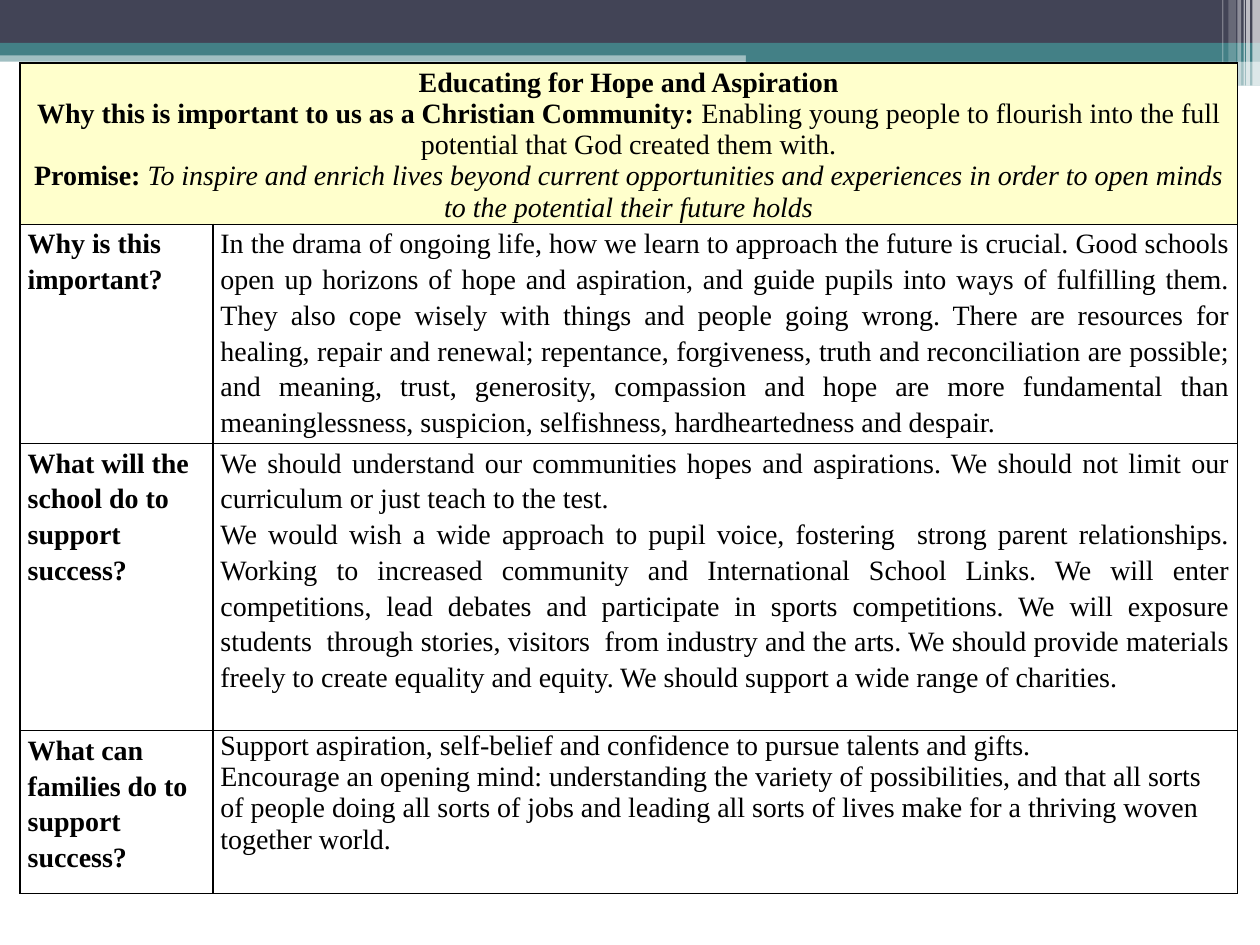
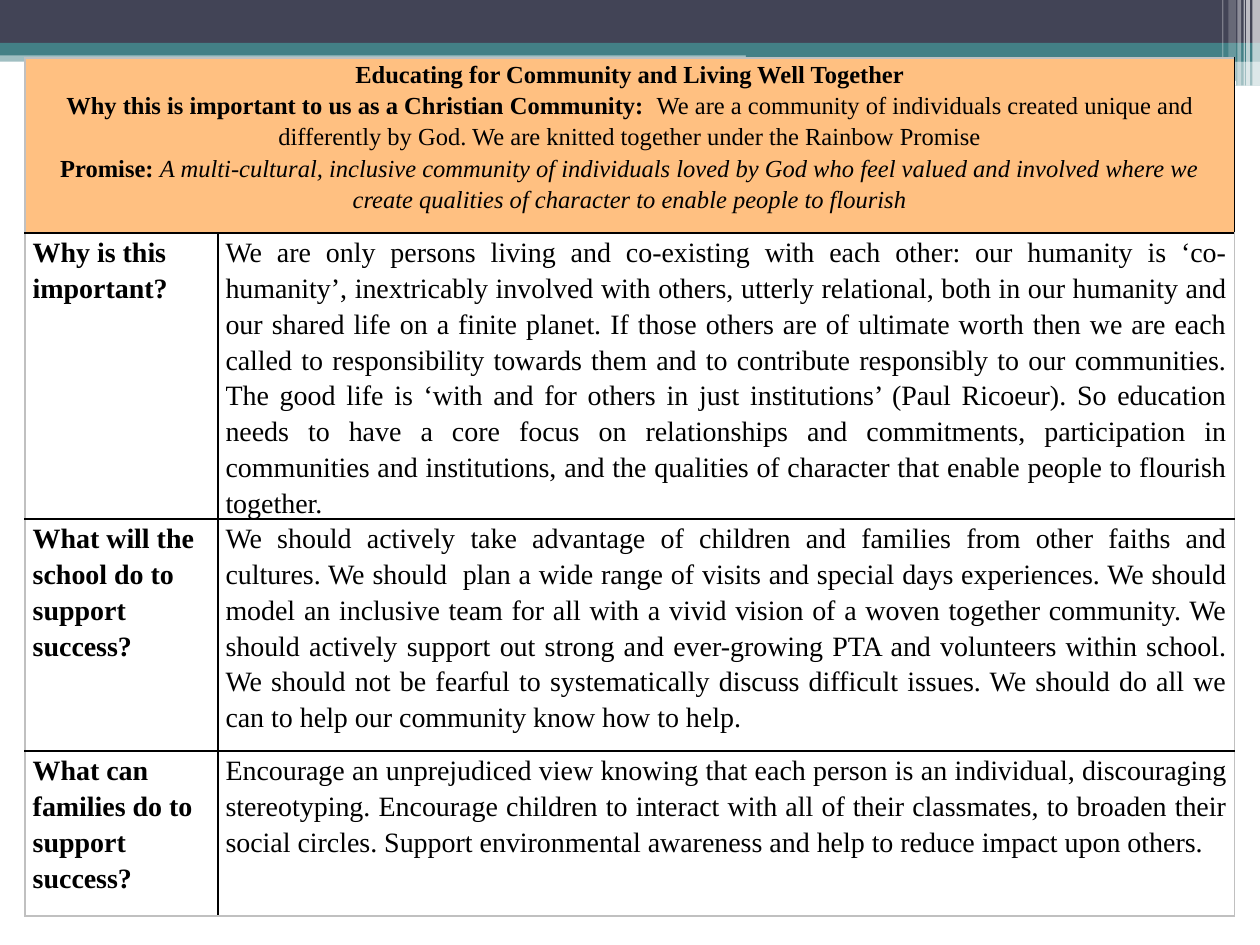
import dataclasses
import typing

import lxml.etree
import pptx
import pptx.dml.color
import pptx.enum.shapes
import pptx.enum.text
import pptx.oxml.ns
import pptx.slide
import pptx.table
import pptx.util

# Grid: 1000 columns by 750 rows of square units over a 10 x 7.5 inch slide
COLUMNS, ROWS = 1000, 750
UNIT = pptx.util.Inches(10) // COLUMNS

ALIGN = pptx.enum.text.PP_ALIGN
RECT = pptx.enum.shapes.MSO_SHAPE.RECTANGLE
ROUNDED = pptx.enum.shapes.MSO_SHAPE.ROUNDED_RECTANGLE


@dataclasses.dataclass(frozen=True)
class Theme:
    font: str = "Times New Roman"
    ink: str = "000000"
    paper: str = "FFFFFF"
    slate: str = "424456"
    teal: str = "438086"
    lemon: str = "FFFFCC"
    apricot: str = "FFC081"
    silver: str = "C0C0C0"
    body_size: float = 16
    small_size: float = 14
    rule_width: float = 1
    loose: float = 1.15
    single: float = 1.0


THEME = Theme()

FORMATS: dict[str, dict[str, bool]] = {
    "plain": {"bold": False, "italic": False},
    "bold": {"bold": True, "italic": False},
    "italic": {"bold": False, "italic": True},
}


class Band(typing.NamedTuple):
    left: int
    top: int
    width: int
    height: int
    color: str
    opacity: int = 100
    outline: pptx.enum.shapes.MSO_SHAPE = RECT


class Words(typing.NamedTuple):
    text: str
    style: str = "plain"


@dataclasses.dataclass(frozen=True)
class Para:
    words: tuple[Words, ...]
    align: ALIGN = ALIGN.JUSTIFY
    spacing: float = THEME.loose
    size: float = THEME.body_size


@dataclasses.dataclass(frozen=True)
class Value:
    """One slide: a heading cell over three question-and-answer rows."""
    left: int
    top: int
    columns: tuple[int, int]
    rows: tuple[int, ...]
    color: str
    edge: str
    heading: tuple[Para, ...]
    answers: tuple[tuple[Para, ...], ...]


# Top bands, then the white stripes in the right corner
BANDS = [
    Band(0, 40, COLUMNS, 9, THEME.teal, 50),
    Band(0, 0, COLUMNS, 34, THEME.slate),
    Band(0, 34, COLUMNS, 10, THEME.teal),
    Band(592, 39, 408, 10, THEME.teal),
    Band(592, 48, 408, 20, THEME.teal, 50),
    Band(591, 54, 335, 3, THEME.paper, outline=ROUNDED),
    Band(806, 64, 175, 4, THEME.paper, outline=ROUNDED),
] + [
    Band(left, 0, width, height, THEME.paper, opacity)
    for left, width, height, opacity in [
        (994, 6, 68, 65), (989, 3, 68, 65), (987, 1, 68, 60),
        (982, 3, 68, 40), (975, 6, 64, 20), (970, 1, 64, 30),
    ]
]

QUESTIONS = (
    "Why is this important?",
    "What will the school do to support success?  ",
    "What can families do to support success?",
)


def heading(title: str, lead: str, reason: str, promise: str,
            size: float, spacing: float) -> tuple[Para, ...]:
    """Title, reason and promise, centred; the title is always loosely spaced."""
    return (
        Para((Words(title, "bold"),), ALIGN.CENTER, THEME.loose, size),
        Para((Words(lead, "bold"), Words(reason)), ALIGN.CENTER, spacing, size),
        Para((Words("Promise: ", "bold"), Words(promise, "italic")),
             ALIGN.CENTER, spacing, size),
    )


def answer(*texts: str, align: ALIGN = ALIGN.JUSTIFY,
           spacing: float = THEME.loose) -> tuple[Para, ...]:
    return tuple(Para((Words(text),), align, spacing) for text in texts)


VALUES = [
    Value(
        16, 50, (153, 813), (128, 174, 228, 129), THEME.lemon, THEME.ink,
        heading(
            "Educating for Hope and Aspiration",
            "Why this is important to us as a Christian Community: ",
            "Enabling young people to flourish into the full potential that God "
            "created them with.",
            "To inspire and enrich lives beyond current opportunities and "
            "experiences in order to open minds to the potential their future holds",
            THEME.body_size, THEME.single,
        ),
        (
            answer(
                "In the drama of ongoing life, how we learn to approach the future is "
                "crucial. Good schools open up horizons of hope and aspiration, and "
                "guide pupils into ways of fulfilling them. They also cope wisely with "
                "things and people going wrong. There are resources for healing, repair "
                "and renewal; repentance, forgiveness, truth and reconciliation are "
                "possible; and meaning, trust, generosity, compassion and hope are more "
                "fundamental than meaninglessness, suspicion, selfishness, "
                "hardheartedness and despair. "
            ),
            answer(
                "We should understand our communities hopes and aspirations. We should "
                "not limit our curriculum or just teach to the test. ",
                "We would wish a wide approach to pupil voice, fostering  strong parent "
                "relationships. Working to increased community and International School "
                "Links. We will enter competitions, lead debates and participate in "
                "sports competitions. We will exposure students  through stories, "
                "visitors  from industry and the arts. We should provide materials "
                "freely to create equality and equity. We should support a wide range "
                "of charities. ",
            ),
            answer(
                "Support aspiration, self-belief and confidence to pursue talents and "
                "gifts.",
                "Encourage an opening mind: understanding the variety of possibilities, "
                "and that all sorts of people doing all sorts of jobs and leading all "
                "sorts of lives make for a thriving woven together world.",
                align=ALIGN.LEFT, spacing=THEME.single,
            ),
        ),
    ),
    Value(
        20, 46, (153, 807), (139, 227, 184, 131), THEME.apricot, THEME.silver,
        heading(
            "Educating for Community and Living Well Together",
            "Why this is important to us as a Christian Community:  ",
            "We are a community of individuals created unique and differently by God. "
            "We are knitted together under the Rainbow Promise",
            "A multi-cultural, inclusive community of individuals loved by God who "
            "feel valued and involved where we create qualities of character to "
            "enable people to flourish",
            THEME.small_size, THEME.loose,
        ),
        (
            answer(
                "We are only persons living and co-existing with each other: our "
                "humanity is ‘co-humanity’, inextricably involved with others, utterly "
                "relational, both in our humanity and our shared life on a finite "
                "planet. If those others are of ultimate worth then we are each called "
                "to responsibility towards them and to contribute responsibly to our "
                "communities. The good life is ‘with and for others in just "
                "institutions’ (Paul Ricoeur). So education needs to have a core focus "
                "on relationships and commitments, participation in communities and "
                "institutions, and the qualities of character that enable people to "
                "flourish together."
            ),
            answer(
                "We should actively take advantage of children and families from other "
                "faiths and cultures. We should  plan a wide range of visits and "
                "special days experiences. We should model an inclusive team for all "
                "with a vivid vision of a woven together community. We should actively "
                "support out strong and ever-growing PTA and volunteers within school. "
                "We should not be fearful to systematically discuss difficult issues. "
                "We should do all we can to help our community know how to help."
            ),
            answer(
                "Encourage an unprejudiced view knowing that each person is an "
                "individual, discouraging stereotyping. Encourage children to interact "
                "with all of their classmates, to broaden their social circles. "
                "Support environmental awareness and help to reduce impact upon others."
            ),
        ),
    ),
]


def apply(target: typing.Any, values: dict[str, typing.Any]) -> None:
    for name, value in values.items():
        setattr(target, name, value)


def rgb(color: str) -> pptx.dml.color.RGBColor:
    return pptx.dml.color.RGBColor.from_string(color)


def draw_band(slide: pptx.slide.Slide, band: Band) -> None:
    strip = slide.shapes.add_shape(
        band.outline, *(UNIT * n for n in (band.left, band.top, band.width, band.height)))
    strip.shadow.inherit = False
    strip.line.fill.background()
    strip.fill.solid()
    strip.fill.fore_color.rgb = rgb(band.color)
    if band.opacity < 100:
        tint = strip._element.spPr.find(".//" + pptx.oxml.ns.qn("a:srgbClr"))
        lxml.etree.SubElement(tint, pptx.oxml.ns.qn("a:alpha"),
                              val=str(band.opacity * 1000))


def rule_cell(cell: pptx.table._Cell, colors: dict[str, str]) -> None:
    """Draw the cell's borders, given a colour for each side."""
    properties = cell._tc.get_or_add_tcPr()
    for place, (side, color) in enumerate(colors.items()):
        rule = lxml.etree.Element(pptx.oxml.ns.qn(f"a:ln{side}"),
                                  w=str(pptx.util.Pt(THEME.rule_width)))
        fill = lxml.etree.SubElement(rule, pptx.oxml.ns.qn("a:solidFill"))
        lxml.etree.SubElement(fill, pptx.oxml.ns.qn("a:srgbClr"), val=color)
        properties.insert(place, rule)


def write_cell(cell: pptx.table._Cell, paras: tuple[Para, ...]) -> None:
    apply(cell, {"margin_left": UNIT * 6, "margin_right": UNIT * 6,
                 "margin_top": 0, "margin_bottom": 0})
    for number, para in enumerate(paras):
        frame = cell.text_frame
        line = frame.paragraphs[0] if number == 0 else frame.add_paragraph()
        apply(line, {"alignment": para.align, "line_spacing": para.spacing})
        for words in para.words:
            run = line.add_run()
            run.text = words.text
            apply(run.font, {"name": THEME.font, "size": pptx.util.Pt(para.size),
                             **FORMATS[words.style]})
            run.font.color.rgb = rgb(THEME.ink)


def draw_value(slide: pptx.slide.Slide, value: Value) -> None:
    last_row, last_column = len(value.rows) - 1, len(value.columns) - 1
    grid = slide.shapes.add_table(
        len(value.rows), len(value.columns), UNIT * value.left, UNIT * value.top,
        UNIT * sum(value.columns), UNIT * sum(value.rows)).table
    apply(grid, {"first_row": False, "horz_banding": False})
    for column, width in zip(grid.columns, value.columns):
        column.width = UNIT * width
    for row, height in zip(grid.rows, value.rows):
        row.height = UNIT * height

    # Fills and borders: the outer edge has its own colour
    for r in range(last_row + 1):
        for c in range(last_column + 1):
            cell = grid.cell(r, c)
            cell.fill.background()
            outer = {"L": c == 0, "R": c == last_column, "T": r == 0, "B": r == last_row}
            rule_cell(cell, {side: value.edge if at_edge else THEME.ink
                             for side, at_edge in outer.items()})

    # Heading across both columns
    top = grid.cell(0, 0)
    top.merge(grid.cell(0, last_column))
    top.fill.solid()
    top.fill.fore_color.rgb = rgb(value.color)
    write_cell(top, value.heading)

    # Questions and answers
    for r, (question, paras) in enumerate(zip(QUESTIONS, value.answers), start=1):
        write_cell(grid.cell(r, 0), (Para((Words(question, "bold"),), ALIGN.LEFT),))
        write_cell(grid.cell(r, 1), paras)


def main() -> None:
    deck = pptx.Presentation()
    apply(deck, {"slide_width": UNIT * COLUMNS, "slide_height": UNIT * ROWS})
    for value in VALUES:
        slide = deck.slides.add_slide(deck.slide_layouts[6])
        for band in BANDS:
            draw_band(slide, band)
        draw_value(slide, value)
    deck.save("out.pptx")


if __name__ == "__main__":
    main()
